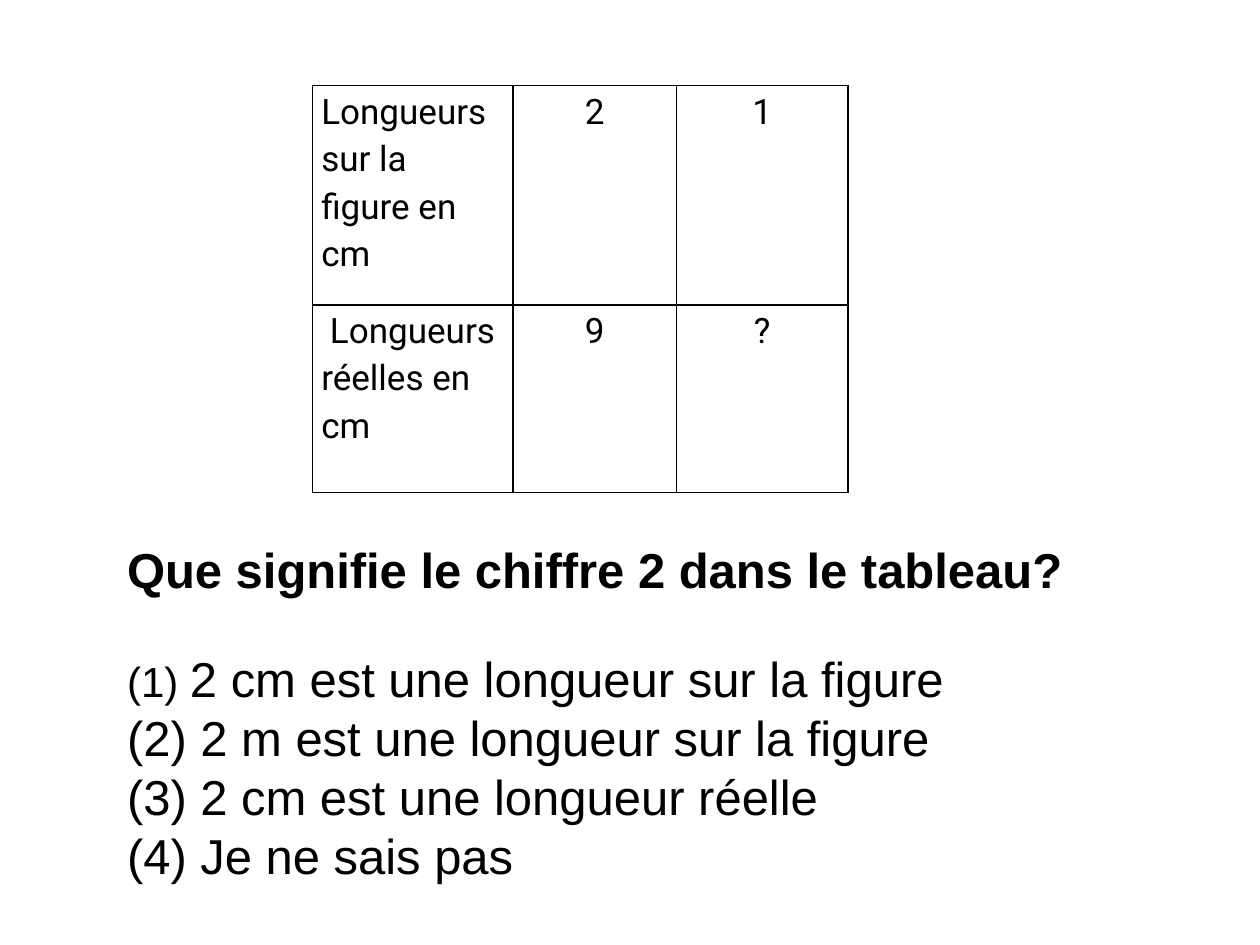
from lxml import etree
from pptx import Presentation
from pptx.dml.color import RGBColor
from pptx.enum import text
from pptx.oxml.ns import qn
from pptx.util import Inches, Pt

BLACK = RGBColor(0, 0, 0)

ROWS = [
    ("Longueurs sur la figure en cm", "2", "1"),
    (" Longueurs réelles en cm", "9", "?"),
]
COLUMN_WIDTHS = (1.59, 1.3, 1.36)
ROW_HEIGHTS = (1.74, 1.49)

QUESTION = "Que signifie le chiffre 2 dans le tableau?"
# Each answer: text, size of the number and the space after it
ANSWERS = [
    ("2 cm est une longueur sur la figure", 24),
    ("2 m est une longueur sur la figure", 28),
    ("2 cm est une longueur réelle", 28),
    ("Je ne sais pas", 28),
]


def add_run(paragraph, words, size, font, bold=False):
    run = paragraph.add_run()
    run.text = words
    run.font.size = Pt(size)
    run.font.name = font
    run.font.bold = bold
    run.font.color.rgb = BLACK


def add_borders(cell):
    properties = cell._tc.get_or_add_tcPr()
    for position, side in enumerate(("a:lnL", "a:lnR", "a:lnT", "a:lnB")):
        line = etree.Element(qn(side), w=str(Pt(1)))
        fill = etree.SubElement(line, qn("a:solidFill"))
        etree.SubElement(fill, qn("a:srgbClr"), val=str(BLACK))
        properties.insert(position, line)


def number_paragraph(paragraph):
    properties = paragraph._p.get_or_add_pPr()
    properties.set("marL", str(Inches(0.38)))
    properties.set("indent", str(-Inches(0.38)))
    etree.SubElement(properties, qn("a:buFont"), typeface="Arial")
    etree.SubElement(properties, qn("a:buAutoNum"), type="arabicParenBoth")


def add_lengths_table(slide):
    table = slide.shapes.add_table(
        len(ROWS), len(COLUMN_WIDTHS), Inches(2.48), Inches(0.68),
        Inches(sum(COLUMN_WIDTHS)), Inches(sum(ROW_HEIGHTS))).table
    table.first_row = table.horz_banding = False
    for column, width in zip(table.columns, COLUMN_WIDTHS):
        column.width = Inches(width)
    for row, height, values in zip(table.rows, ROW_HEIGHTS, ROWS):
        row.height = Inches(height)
        for index, (cell, value) in enumerate(zip(row.cells, values)):
            cell.margin_left = cell.margin_right = Inches(0.07)
            cell.margin_top = cell.margin_bottom = 0
            cell.fill.background()
            add_borders(cell)
            paragraph = cell.text_frame.paragraphs[0]
            paragraph.line_spacing = 1.15
            if index:
                paragraph.alignment = text.PP_ALIGN.CENTER
            add_run(paragraph, value, 20, "Roboto")


def add_question(slide):
    box = slide.shapes.add_textbox(
        Inches(0.91), Inches(4.23), Inches(7.95), Inches(2.86))
    frame = box.text_frame
    frame.word_wrap = True
    frame.auto_size = text.MSO_AUTO_SIZE.SHAPE_TO_FIT_TEXT
    heading = frame.paragraphs[0]
    heading.space_after = Pt(29)
    add_run(heading, QUESTION, 28, "Arial", bold=True)
    for answer, number_size in ANSWERS:
        paragraph = frame.add_paragraph()
        number_paragraph(paragraph)
        add_run(paragraph, " ", number_size, "Arial")
        add_run(paragraph, answer, 28, "Arial")


def main():
    presentation = Presentation()
    presentation.slide_width = Inches(10)
    presentation.slide_height = Inches(7.5)
    slide = presentation.slides.add_slide(presentation.slide_layouts[6])
    add_lengths_table(slide)
    add_question(slide)
    presentation.save("out.pptx")


if __name__ == "__main__":
    main()
